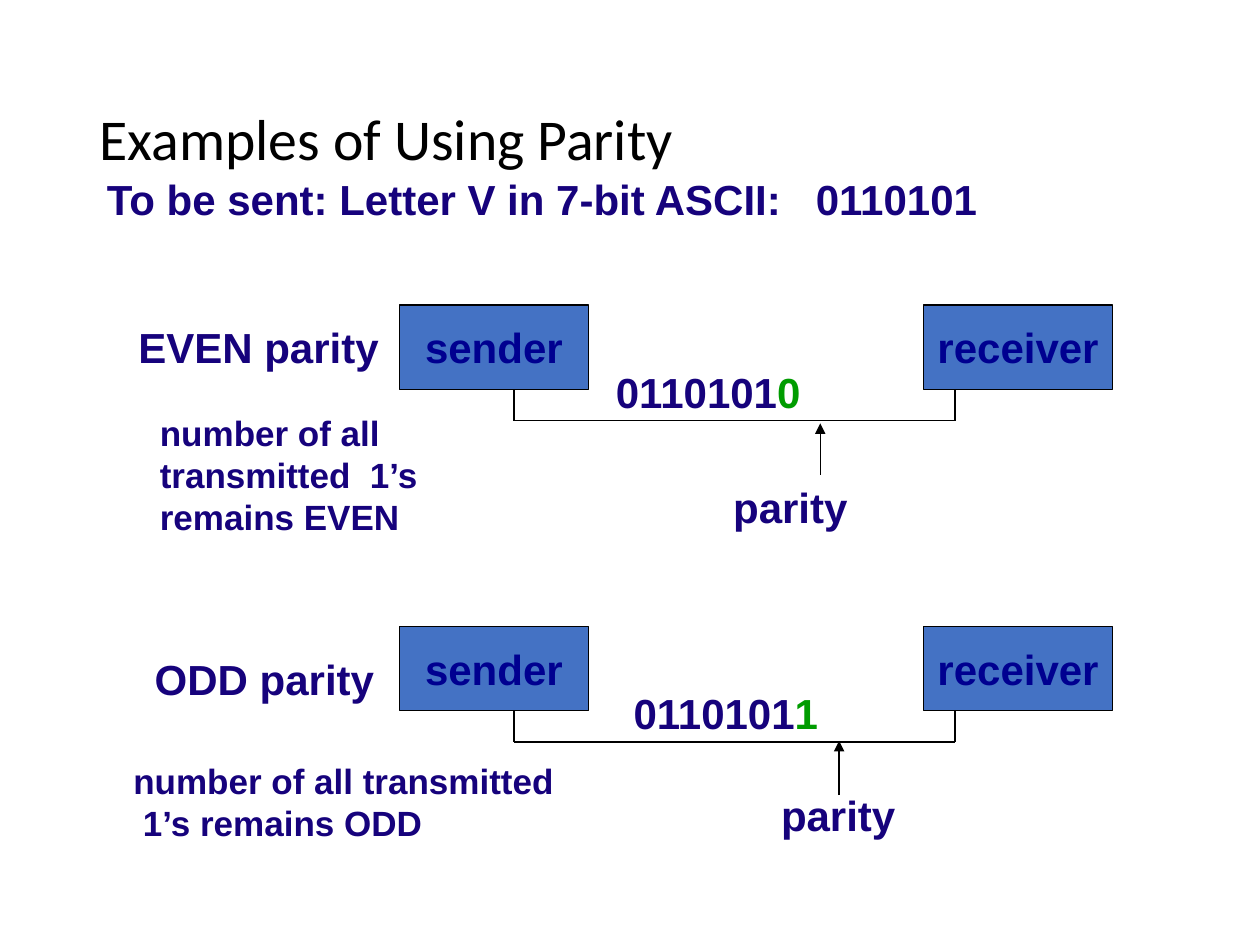
"""Build a slide that compares even and odd parity."""
from lxml import etree
from pptx import Presentation
from pptx.dml.color import RGBColor
from pptx.enum.shapes import MSO_CONNECTOR, MSO_SHAPE
from pptx.enum.text import MSO_ANCHOR, MSO_AUTO_SIZE, PP_ALIGN
from pptx.oxml.ns import qn
from pptx.util import Inches, Pt

RECTANGLE = MSO_SHAPE.RECTANGLE
STRAIGHT = MSO_CONNECTOR.STRAIGHT
MIDDLE = MSO_ANCHOR.MIDDLE
CENTER = PP_ALIGN.CENTER
FIT_SHAPE = MSO_AUTO_SIZE.SHAPE_TO_FIT_TEXT

COLORS = {
    "black": "000000",
    "text": "16027C",
    "station": "4472C4",
    "station_text": "000090",
    "parity_bit": "009C00",
}
DATA_BITS = "0110101"
STATION_WIDTH, STATION_HEIGHT = 1.5, 0.67
STATIONS = {"sender": 3.17, "receiver": 7.33}
WIRE_LEFT, WIRE_RIGHT, WIRE_DROP = 4.08, 7.58, 0.92


def color(name):
    """Return the named colour."""
    return RGBColor.from_string(COLORS[name])


def set_font(paragraph, size, color_name="text", name="Arial", bold=True):
    """Set the font of a whole paragraph."""
    font = paragraph.font
    font.name, font.size, font.bold = name, Pt(size), bold
    font.color.rgb = color(color_name)


def add_label(shapes, text, box, size=24, wrap=False):
    """Add a bold text box and return its paragraph."""
    frame = shapes.add_textbox(*map(Inches, box)).text_frame
    frame.word_wrap = wrap
    frame.auto_size = FIT_SHAPE
    paragraph = frame.paragraphs[0]
    paragraph.add_run().text = text
    set_font(paragraph, size)
    return paragraph


def add_title(shapes, text):
    """Add the slide title."""
    box = map(Inches, (0.69, 0.4, 8.62, 1.45))
    frame = shapes.add_textbox(*box).text_frame
    frame.word_wrap = True
    frame.vertical_anchor = MIDDLE
    paragraph = frame.paragraphs[0]
    paragraph.text = text
    paragraph.line_spacing = 0.9
    set_font(paragraph, 33, "black", "Calibri", False)


def add_station(shapes, text, left, top):
    """Add a sender or receiver box."""
    box = map(Inches, (left, top, STATION_WIDTH, STATION_HEIGHT))
    shape = shapes.add_shape(RECTANGLE, *box)
    shape.shadow.inherit = False
    shape.fill.solid()
    shape.fill.fore_color.rgb = color("station")
    shape.line.color.rgb = color("black")
    shape.line.width = Pt(0.75)
    frame = shape.text_frame
    frame.word_wrap = False
    frame.vertical_anchor = MIDDLE
    paragraph = frame.paragraphs[0]
    paragraph.text = text
    paragraph.alignment = CENTER
    set_font(paragraph, 24, "station_text")


def add_line(shapes, start, end, arrow=False):
    """Add a thin black line, with an arrowhead at its end if asked."""
    line = shapes.add_connector(STRAIGHT, *map(Inches, (*start, *end)))
    line.line.color.rgb = color("black")
    line.line.width = Pt(0.75)
    if arrow:
        outline = line.line._get_or_add_ln()
        etree.SubElement(outline, qn("a:tailEnd"), type="triangle")
    etree.SubElement(line._element.spPr, qn("a:effectLst"))


def add_wire(shapes, top):
    """Add the wire that runs below the stations and joins them."""
    wire_top, station_bottom = top + WIRE_DROP, top + STATION_HEIGHT
    add_line(shapes, (WIRE_LEFT, wire_top), (WIRE_RIGHT, wire_top))
    for x in (WIRE_RIGHT, WIRE_LEFT):
        add_line(shapes, (x, wire_top), (x, station_bottom))


def add_example(slide, top, name, name_box, bit, bits_left, parity_at,
                arrow, note, note_box):
    """Add one grouped parity example."""
    shapes = slide.shapes.add_group_shape().shapes
    for station, left in STATIONS.items():
        add_station(shapes, station, left, top)
    bits = add_label(shapes, DATA_BITS, (bits_left, top + 0.44, 1.94, 0.57))
    parity_run = bits.add_run()
    parity_run.text = bit
    parity_run.font.color.rgb = color("parity_bit")
    add_wire(shapes, top)
    add_label(shapes, name, name_box)
    add_label(shapes, "parity", (*parity_at, 1.11, 0.5))
    x, tail, tip = arrow
    add_line(shapes, (x, tail), (x, tip), arrow=True)
    add_label(shapes, note, note_box, size=20, wrap=True)


def main():
    """Build and save the presentation."""
    presentation = Presentation()
    presentation.slide_width, presentation.slide_height = Inches(10), Inches(7.5)
    slide = presentation.slides.add_slide(presentation.slide_layouts[6])
    add_title(slide.shapes, "Examples of Using Parity")
    add_example(
        slide, top=2.42, name="EVEN parity", name_box=(1, 2.5, 2.11, 0.5),
        bit="0", bits_left=4.79, parity_at=(5.72, 3.77),
        arrow=(6.51, 3.77, 3.36),
        note="number of all transmitted  1’s remains EVEN",
        note_box=(1.17, 3.22, 2.92, 1.1))
    add_label(slide.shapes, f"To be sent: Letter V in 7-bit ASCII:   {DATA_BITS}",
              (0.75, 1.33, 7.38, 0.57))
    add_example(
        slide, top=4.97, name="ODD parity", name_box=(1.13, 5.14, 1.94, 0.5),
        bit="1", bits_left=4.93, parity_at=(6.1, 6.22),
        arrow=(6.66, 6.31, 5.88),
        note="number of all transmitted  1’s remains ODD",
        note_box=(0.96, 5.98, 3.54, 0.77))
    presentation.save("out.pptx")


if __name__ == "__main__":
    main()
